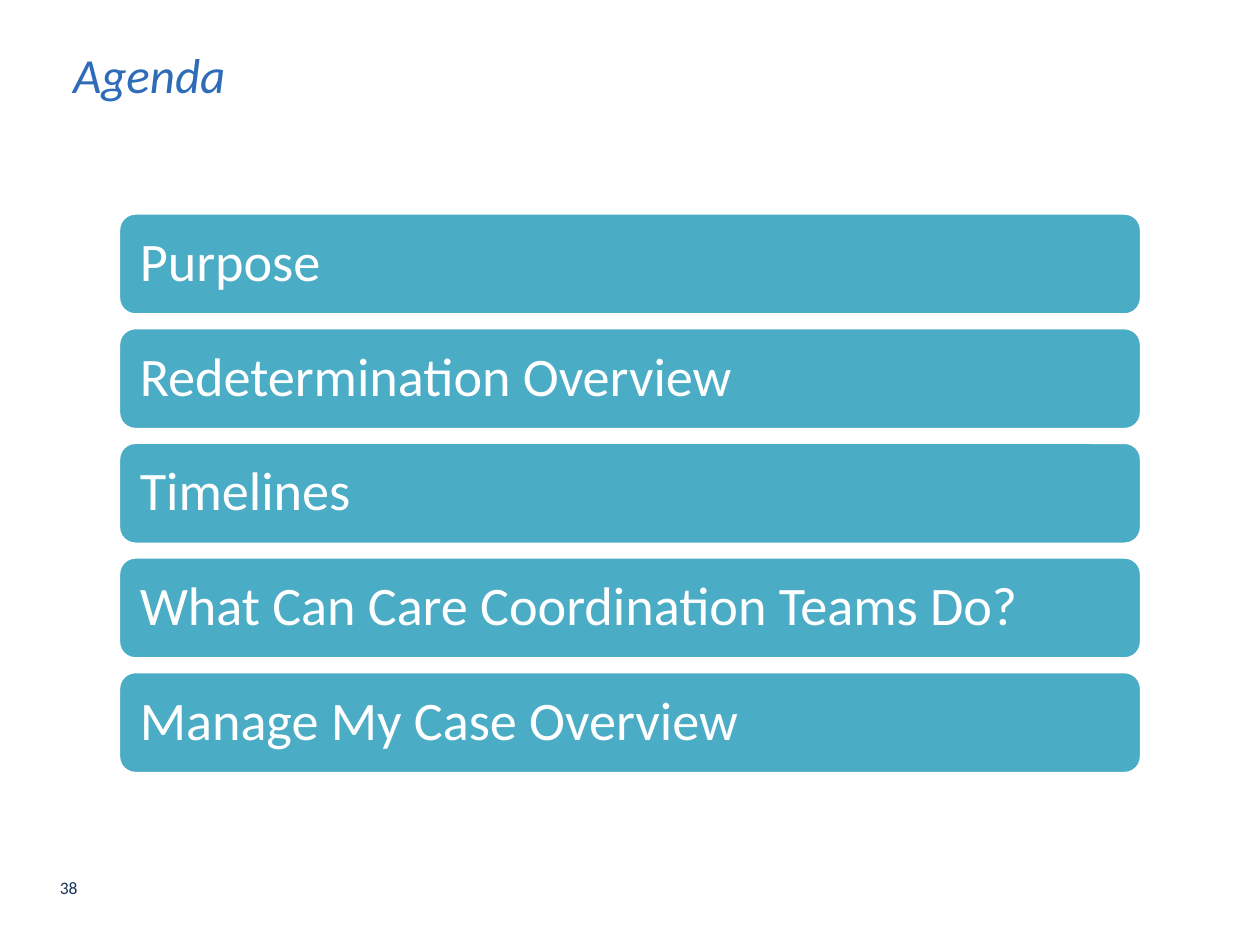
import pptx
import pptx.util
import pptx.dml.color
import pptx.enum.shapes
import pptx.enum.text
from pptx.util import Inches

COLORS = {"title": "2E6CB8", "number": "143256", "bar": "4BACC6", "white": "FFFFFF"}
TOPICS = [
    "Purpose",
    "Redetermination Overview",
    "Timelines",
    "What Can Care Coordination Teams Do?",
    "Manage My Case Overview",
]
BAR_LEFT, BAR_TOP, BAR_WIDTH, BAR_HEIGHT, BAR_STEP = 0.94, 1.69, 8.12, 0.81, 0.91


def rgb(name):
    return pptx.dml.color.RGBColor.from_string(COLORS[name])


def write_text(box, text, size, color, italic=False, align="LEFT", spacing=None,
               insets=(0.1, 0.05, 0.1, 0.05)):
    frame = box.text_frame
    frame.word_wrap = True
    frame.auto_size = pptx.enum.text.MSO_AUTO_SIZE.NONE
    frame.vertical_anchor = pptx.enum.text.MSO_ANCHOR.MIDDLE
    frame.margin_left, frame.margin_top, frame.margin_right, frame.margin_bottom = map(Inches, insets)
    para = frame.paragraphs[0]
    para.alignment = getattr(pptx.enum.text.PP_ALIGN, align)
    if spacing:
        para.line_spacing = spacing
    span = para.add_run()
    span.text = text
    span.font.name = "Calibri"
    span.font.size = pptx.util.Pt(size)
    span.font.italic = italic
    span.font.color.rgb = rgb(color)


def place_title(page, text):
    title = page.shapes.title
    title.left, title.top = Inches(0.38), Inches(0.3)
    title.width, title.height = Inches(8.58), Inches(0.58)
    write_text(title, text, 28, "title", italic=True, insets=(0.2, 0, 0.1, 0))


def add_topic_bar(page, text, top):
    bar = page.shapes.add_shape(
        pptx.enum.shapes.MSO_SHAPE.ROUNDED_RECTANGLE,
        Inches(BAR_LEFT), Inches(top), Inches(BAR_WIDTH), Inches(BAR_HEIGHT))
    bar.shadow.inherit = False
    bar.fill.solid()
    bar.fill.fore_color.rgb = rgb("bar")
    bar.line.color.rgb = rgb("white")
    bar.line.width = pptx.util.Pt(2)
    write_text(bar, text, 31, "white", spacing=0.9, insets=(0.13, 0.13, 0.13, 0.13))


def add_page_number(page, text):
    box = page.shapes.add_textbox(Inches(0.28), Inches(6.92), Inches(0.53), Inches(0.24))
    write_text(box, text, 10, "number", align="CENTER")


def main():
    deck = pptx.Presentation()
    deck.slide_width, deck.slide_height = Inches(10), Inches(7.5)
    page = deck.slides.add_slide(deck.slide_layouts.get_by_name("Title Only"))
    place_title(page, "Agenda")
    add_page_number(page, "38")
    for index, topic in enumerate(TOPICS):
        add_topic_bar(page, topic, BAR_TOP + index * BAR_STEP)
    deck.save("out.pptx")


if __name__ == "__main__":
    main()
